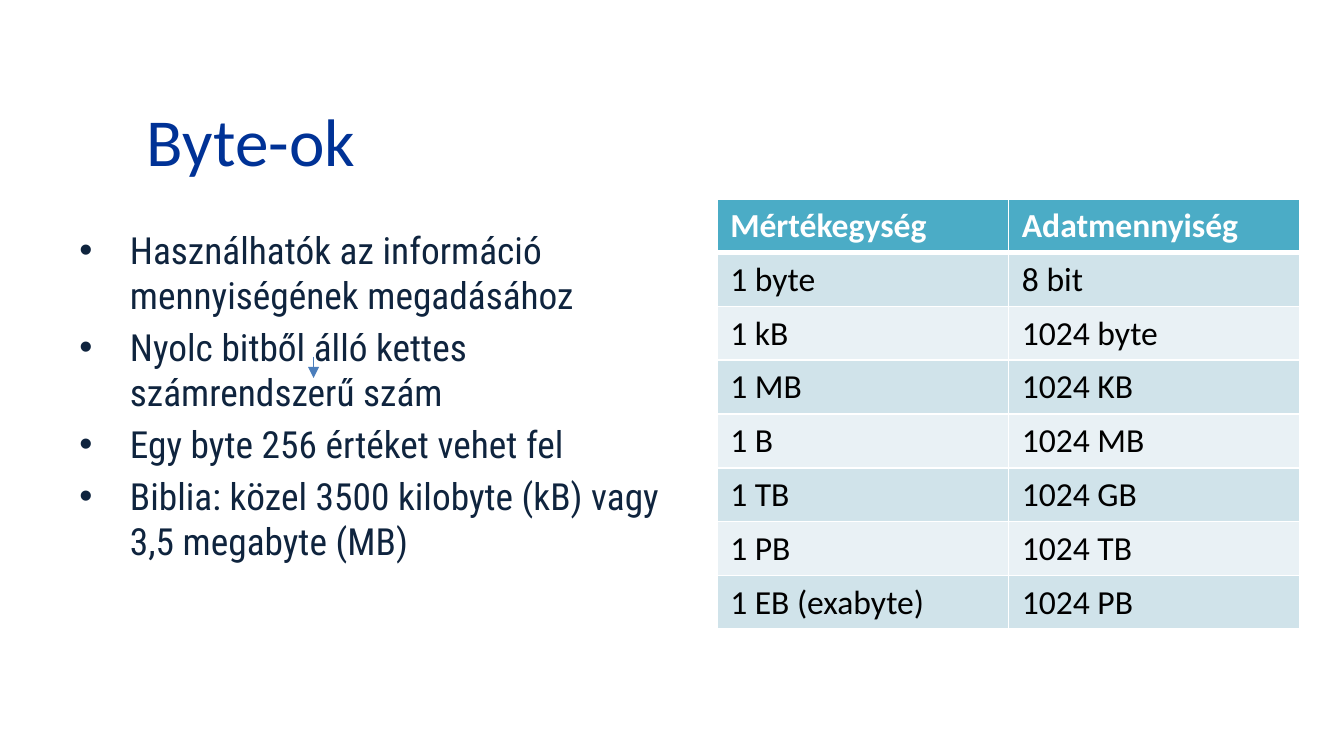
import pptx
import pptx.dml.color
import pptx.enum.shapes
import pptx.enum.text
import pptx.oxml
import pptx.oxml.ns
import pptx.util

Pt = pptx.util.Pt
RGBColor = pptx.dml.color.RGBColor

WHITE = RGBColor(0xFF, 0xFF, 0xFF)
BLACK = RGBColor(0x00, 0x00, 0x00)
TITLE_BLUE = RGBColor(0x00, 0x32, 0x96)
NAVY = RGBColor(0x0F, 0x24, 0x3E)
HEADER_TEAL = RGBColor(0x4B, 0xAC, 0xC6)
BAND_DARK = RGBColor(0xD0, 0xE3, 0xEA)
BAND_LIGHT = RGBColor(0xE9, 0xF1, 0xF5)
ARROW_BLUE = RGBColor(0x4B, 0x7E, 0xBC)

BULLETS = [
    "Használhatók az információ mennyiségének megadásához",
    "Nyolc bitből álló kettes számrendszerű szám",
    "Egy byte 256 értéket vehet fel",
    "Biblia: közel 3500 kilobyte (kB) vagy 3,5 megabyte (MB)",
]
UNITS = [
    ("Mértékegység", "Adatmennyiség"),
    ("1 byte", "8 bit"),
    ("1 kB", "1024 byte"),
    ("1 MB", "1024 KB"),
    ("1 B", "1024 MB"),
    ("1 TB", "1024 GB"),
    ("1 PB", "1024 TB"),
    ("1 EB (exabyte)", "1024 PB"),
]


def add_xml(parent, tag, content="", **attributes):
    """Append a DrawingML element to parent."""
    listed = "".join(f' {name}="{value}"' for name, value in attributes.items())
    namespace = pptx.oxml.ns.nsdecls("a")
    parent.append(pptx.oxml.parse_xml(f"<a:{tag} {namespace}{listed}>{content}</a:{tag}>"))


class SlideBuilder:
    heading_font = "Calibri"
    body_font = "Roboto Condensed"

    def __init__(self, page):
        self.page = page

    def style(self, para, font, size, color, bold=False):
        para.font.name = font
        para.font.size = Pt(size)
        para.font.color.rgb = color
        para.font.bold = bold

    def title(self, text, left, top, width, height):
        box = self.page.shapes.title
        box.left, box.top, box.width, box.height = map(Pt, (left, top, width, height))
        box.text_frame.vertical_anchor = pptx.enum.text.MSO_ANCHOR.MIDDLE
        para = box.text_frame.paragraphs[0]
        para.text = text
        para.alignment = pptx.enum.text.PP_ALIGN.LEFT
        self.style(para, self.heading_font, 36, TITLE_BLUE)

    def bullet_list(self, items, left, top, width, height):
        box = self.page.shapes.add_textbox(*map(Pt, (left, top, width, height)))
        frame = box.text_frame
        frame.word_wrap = True
        for index, item in enumerate(items):
            para = frame.add_paragraph() if index else frame.paragraphs[0]
            para.text = item
            properties = para._p.get_or_add_pPr()
            properties.set("marL", str(Pt(27)))
            properties.set("indent", str(-Pt(27)))
            add_xml(properties, "buFont", typeface="Arial")
            add_xml(properties, "buChar", char="•")
            if index:
                para.space_before = Pt(4)
            self.style(para, self.body_font, 20, NAVY)

    def table(self, rows, left, top, width, height):
        frame = self.page.shapes.add_table(
            len(rows), len(rows[0]), *map(Pt, (left, top, width, height)))
        for row_index, row in enumerate(rows):
            header = row_index == 0
            band = BAND_DARK if row_index % 2 else BAND_LIGHT
            for column_index, text in enumerate(row):
                cell = frame.table.cell(row_index, column_index)
                self.cell_borders(cell, top=3 if row_index == 1 else 1,
                                  bottom=3 if header else 1)
                cell.fill.solid()
                cell.fill.fore_color.rgb = HEADER_TEAL if header else band
                para = cell.text_frame.paragraphs[0]
                para.text = text
                self.style(para, self.heading_font, 18, WHITE if header else BLACK, header)

    def cell_borders(self, cell, top, bottom):
        fill = f'<a:solidFill><a:srgbClr val="{WHITE}"/></a:solidFill>'
        for side, weight in (("L", 1), ("R", 1), ("T", top), ("B", bottom)):
            add_xml(cell._tc.get_or_add_tcPr(), f"ln{side}", fill, w=Pt(weight))

    def arrow(self, start_x, start_y, end_x, end_y):
        line = self.page.shapes.add_connector(
            pptx.enum.shapes.MSO_CONNECTOR.STRAIGHT,
            *map(Pt, (start_x, start_y, end_x, end_y)))
        line.line.color.rgb = ARROW_BLUE
        line.line.width = Pt(0.75)
        add_xml(line.line._get_or_add_ln(), "tailEnd", type="triangle")
        add_xml(line._element.spPr, "effectLst")


def main():
    deck = pptx.Presentation()
    deck.slide_width, deck.slide_height = Pt(720), Pt(405)
    builder = SlideBuilder(deck.slides.add_slide(deck.slide_layouts[5]))
    builder.title("Byte-ok", 71.5, 34, 612.5, 82)
    builder.bullet_list(BULLETS, 35.5, 118, 337, 264)
    builder.table(UNITS, 384, 106.5, 312.5, 230.4)
    builder.arrow(168, 191, 168, 202.5)
    deck.save("out.pptx")


if __name__ == "__main__":
    main()
